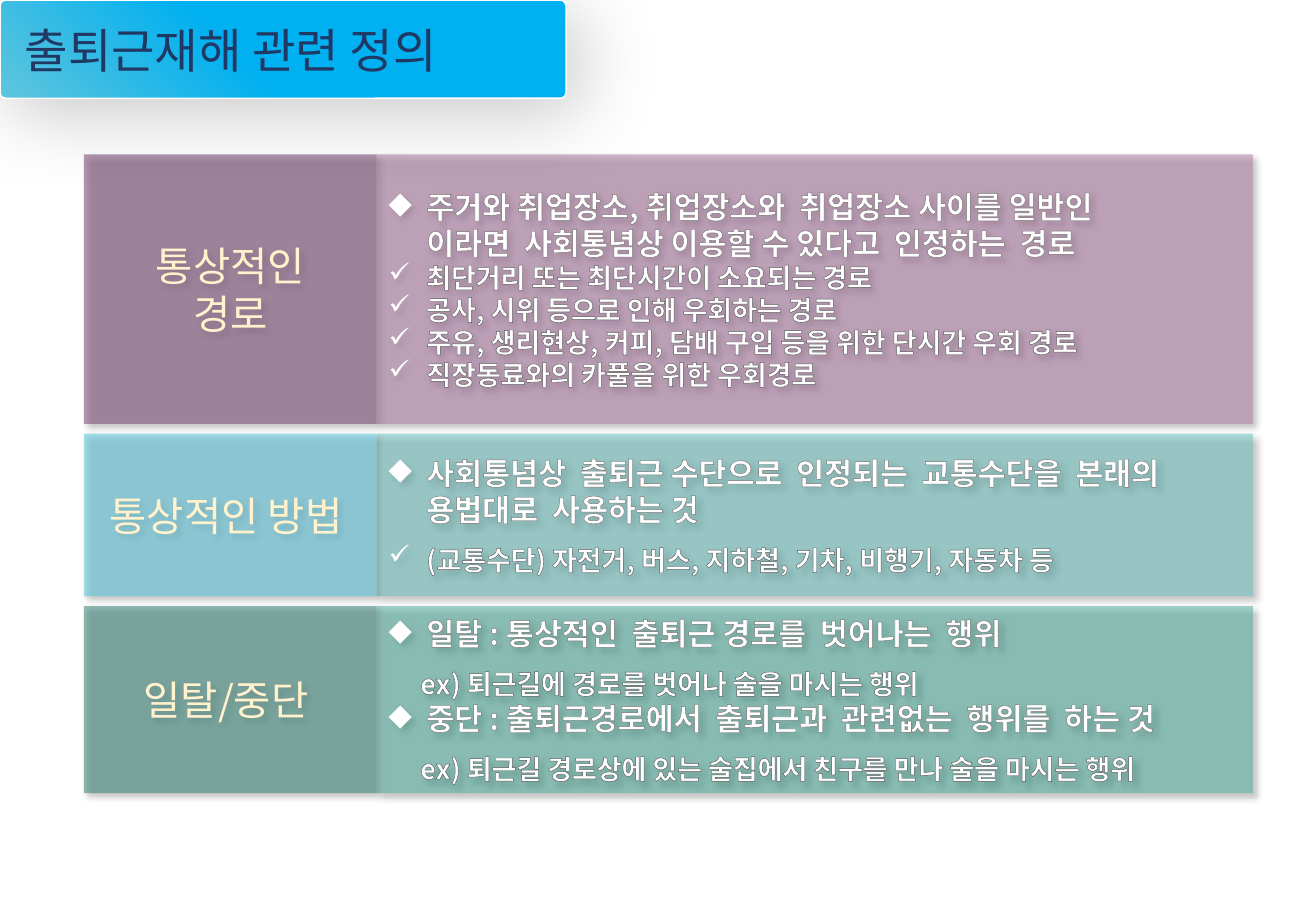
from dataclasses import dataclass

from lxml import etree
from pptx import Presentation
from pptx import util as u
from pptx.dml.color import RGBColor
from pptx.enum import shapes, text
from pptx.oxml import ns

FONT = "Noto Sans CJK KR"
WHITE = "FFFFFF"
LABEL_LEFT, LABEL_WIDTH = 0.69, 2.41
BODY_LEFT, BODY_WIDTH = LABEL_LEFT + LABEL_WIDTH, 7.21
TABLE_TOP, ROW_GAP = 1.27, 0.08
HANGING = 0.31
EXAMPLE_INDENT = 0.26


@dataclass
class TextStyle:
    size: float
    color: str
    bold: bool = False
    outline: str = ""
    outline_width: float = 0


@dataclass
class Shadow:
    opacity: int
    blur: float
    distance: float
    angle: int


@dataclass
class Line:
    wording: str
    style: TextStyle
    bullet: str = ""
    spacing: float = 1.0


@dataclass
class Row:
    label: str
    label_fill: str
    body_fill: str
    height: float
    lines: list[Line]
    label_right_margin: float = 0.1


TITLE = TextStyle(28, "203864")
LABEL = TextStyle(24, "FFF2CC", False, "808080", 0.25)
MAIN = TextStyle(18, WHITE, True, "767171", 0.75)
DETAIL = TextStyle(16, WHITE, True, "595959", 0.75)
CELL_SHADOW = Shadow(40, 4, 3, 45)
TITLE_SHADOW = Shadow(22, 48, 10, 50)


def definition(wording: str) -> Line:
    return Line(wording, MAIN, "◆")


def check(wording: str, spacing: float = 1.0) -> Line:
    return Line(wording, DETAIL, "✓", spacing)


def example(wording: str) -> Line:
    return Line(wording, DETAIL, spacing=1.5)


ROWS = [
    Row("통상적인\n경로", "7E4D76", "B383AB", 2.22, [
        definition("주거와 취업장소, 취업장소와  취업장소 사이를 일반인\v"
                   "이라면  사회통념상 이용할 수 있다고  인정하는  경로"),
        check("최단거리 또는 최단시간이 소요되는 경로"),
        check("공사, 시위 등으로 인해 우회하는 경로"),
        check("주유, 생리현상, 커피, 담배 구입 등을 위한 단시간 우회 경로"),
        check("직장동료와의 카풀을 위한 우회경로"),
    ]),
    Row("통상적인 방법", "5FC5DC", "74C5C3", 1.34, [
        definition("사회통념상  출퇴근 수단으로  인정되는  교통수단을  본래의\v"
                   "용법대로  사용하는 것"),
        check("(교통수단) 자전거, 버스, 지하철, 기차, 비행기, 자동차 등", 1.5),
    ], 0.17),
    Row("일탈/중단", "3D877B", "59B3A4", 1.54, [
        definition("일탈 : 통상적인  출퇴근 경로를  벗어나는  행위"),
        example("ex) 퇴근길에 경로를 벗어나 술을 마시는 행위"),
        definition("중단 : 출퇴근경로에서  출퇴근과  관련없는  행위를  하는 것"),
        example("ex) 퇴근길 경로상에 있는 술집에서 친구를 만나 술을 마시는 행위"),
    ], 0.17),
]


def rgb(value: str) -> RGBColor:
    return RGBColor.from_string(value)


def add_child(parent, tag: str, **attributes):
    child = etree.SubElement(parent, ns.qn(tag))
    for name, value in attributes.items():
        child.set(name, str(value))
    return child


def set_shadow(shape, shadow: Shadow) -> None:
    shape.shadow.inherit = False
    effects = shape._element.spPr.find(ns.qn("a:effectLst"))
    outer = add_child(effects, "a:outerShdw", blurRad=u.Pt(shadow.blur),
                      dist=u.Pt(shadow.distance), dir=shadow.angle * 60000,
                      algn="tl", rotWithShape=0)
    color = add_child(outer, "a:srgbClr", val="000000")
    add_child(color, "a:alpha", val=shadow.opacity * 1000)


def format_runs(paragraph, style: TextStyle) -> None:
    for run in paragraph.runs:
        run.font.size = u.Pt(style.size)
        run.font.bold = style.bold
        run.font.name = FONT
        run.font.color.rgb = rgb(style.color)
        properties = run.font._element
        add_child(properties, "a:ea", typeface=FONT)
        if style.outline:
            outline = etree.Element(ns.qn("a:ln"), w=str(u.Pt(style.outline_width)))
            fill = add_child(outline, "a:solidFill")
            add_child(fill, "a:srgbClr", val=style.outline)
            properties.insert(0, outline)


def write_lines(shape, lines: list[Line], align) -> None:
    frame = shape.text_frame
    frame.word_wrap = True
    frame.vertical_anchor = text.MSO_ANCHOR.MIDDLE
    frame.text = "\n".join(line.wording for line in lines)
    for paragraph, line in zip(frame.paragraphs, lines):
        properties = paragraph._p.get_or_add_pPr()
        if line.bullet:
            properties.set("marL", str(u.Inches(HANGING)))
            properties.set("indent", str(u.Inches(-HANGING)))
            add_child(properties, "a:buChar", char=line.bullet)
        elif line.style is DETAIL:
            properties.set("marL", str(u.Inches(EXAMPLE_INDENT)))
        paragraph.alignment = align
        paragraph.line_spacing = line.spacing
        format_runs(paragraph, line.style)


def add_cell(slide, left: float, top: float, width: float, height: float, fill: str):
    """Draw one translucent, borderless cell of the definitions grid."""
    cell = slide.shapes.add_shape(shapes.MSO_SHAPE.RECTANGLE, u.Inches(left),
                                  u.Inches(top), u.Inches(width), u.Inches(height))
    cell.fill.solid()
    cell.fill.fore_color.rgb = rgb(fill)
    color = cell._element.spPr.find(ns.qn("a:solidFill"))[0]
    add_child(color, "a:alpha", val=56000)
    cell.line.fill.background()
    set_shadow(cell, CELL_SHADOW)
    return cell


def add_title(slide) -> None:
    banner = slide.shapes.add_shape(shapes.MSO_SHAPE.ROUNDED_RECTANGLE, 0, 0,
                                    u.Inches(4.66), u.Inches(0.81))
    banner.adjustments[0] = 0.06
    banner.fill.gradient()
    banner.fill.gradient_angle = 45
    stops = ((0, "5FC5DC"), (0.43, "00B0F0"))
    for stop, (position, color) in zip(banner.fill.gradient_stops, stops):
        stop.position = position
        stop.color.rgb = rgb(color)
    banner.line.color.rgb = rgb(WHITE)
    banner.line.width = u.Pt(1)
    set_shadow(banner, TITLE_SHADOW)
    banner.text_frame.margin_left = u.Inches(0.19)
    write_lines(banner, [Line("출퇴근재해 관련 정의", TITLE)], text.PP_ALIGN.LEFT)


def main() -> None:
    deck = Presentation()
    deck.slide_width, deck.slide_height = u.Inches(10.83), u.Inches(7.5)
    slide = deck.slides.add_slide(deck.slide_layouts[6])

    top = TABLE_TOP
    for row in ROWS:
        body = add_cell(slide, BODY_LEFT, top, BODY_WIDTH, row.height, row.body_fill)
        write_lines(body, row.lines, text.PP_ALIGN.LEFT)
        label = add_cell(slide, LABEL_LEFT, top, LABEL_WIDTH, row.height, row.label_fill)
        label.text_frame.margin_right = u.Inches(row.label_right_margin)
        label_lines = [Line(part, LABEL) for part in row.label.split("\n")]
        write_lines(label, label_lines, text.PP_ALIGN.CENTER)
        top += row.height + ROW_GAP
    add_title(slide)

    deck.save("out.pptx")


if __name__ == "__main__":
    main()
